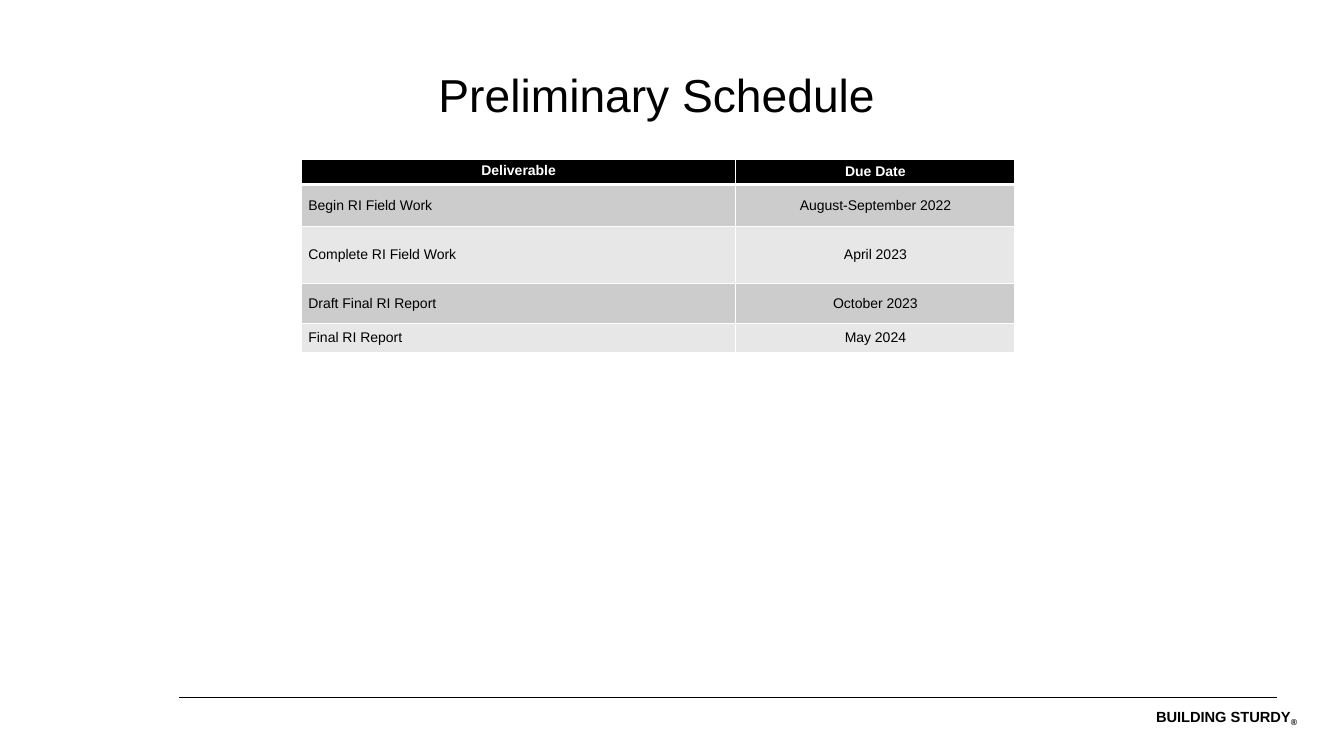
"""Build the preliminary schedule slide."""
from lxml import etree
from pptx import Presentation
from pptx.dml.color import RGBColor
from pptx.enum.shapes import MSO_CONNECTOR
from pptx.enum.text import MSO_ANCHOR, PP_ALIGN
from pptx.oxml.ns import qn
from pptx.util import Pt

BLACK = RGBColor(0, 0, 0)
WHITE = RGBColor(255, 255, 255)
DARK = RGBColor(0xCC, 0xCC, 0xCC)
LIGHT = RGBColor(0xE7, 0xE7, 0xE7)
LEFT, CENTER, RIGHT = PP_ALIGN.LEFT, PP_ALIGN.CENTER, PP_ALIGN.RIGHT
TOP, MIDDLE = MSO_ANCHOR.TOP, MSO_ANCHOR.MIDDLE
STRAIGHT = MSO_CONNECTOR.STRAIGHT


def style(font, size, color=BLACK, bold=False):
    for key, value in {"name": "Arial", "size": Pt(size), "bold": bold}.items():
        setattr(font, key, value)
    font.color.rgb = color


def edge(cell, side, width):
    line = etree.SubElement(cell._tc.get_or_add_tcPr(), qn(f"a:ln{side}"), w=str(Pt(width)))
    fill = etree.SubElement(line, qn("a:solidFill"))
    etree.SubElement(fill, qn("a:srgbClr"), val=str(WHITE))


deck = Presentation()
deck.slide_width, deck.slide_height = Pt(960), Pt(540)
slide = deck.slides.add_slide(deck.slide_layouts[5])
shapes = slide.shapes

rule = shapes.add_connector(STRAIGHT, Pt(912.2), Pt(498.2), Pt(128.2), Pt(498.2))
rule.line.color.rgb = BLACK
rule.line.width = Pt(0.75)
etree.SubElement(rule._element.spPr, qn("a:effectLst"))

motto = shapes.add_textbox(Pt(653), Pt(505.4), Pt(273.6), Pt(13)).text_frame
for key in ("margin_left", "margin_top", "margin_right", "margin_bottom"):
    setattr(motto, key, 0)
motto.word_wrap = True
para = motto.paragraphs[0]
para.alignment = RIGHT
for text, base in (("BUILDING STURDY", 0), ("®", -25000)):
    run = para.add_run()
    run.text = text
    style(run.font, 10.5, bold=True)
    if base:
        run._r.get_or_add_rPr().set("baseline", str(base))

title = shapes.title
box = {"left": 226.1, "top": 41.8, "width": 486, "height": 51.1}
for key, value in box.items():
    setattr(title, key, Pt(value))
frame = title.text_frame
frame.text = "Preliminary Schedule"
frame.vertical_anchor = MIDDLE
frame.paragraphs[0].alignment = CENTER
style(frame.paragraphs[0].runs[0].font, 33)

ROWS = [
    ("Deliverable", "Due Date", 18),
    ("Begin RI Field Work", "August-September 2022", 30.2),
    ("Complete RI Field Work", "April 2023", 40.3),
    ("Draft Final RI Report", "October 2023", 28.8),
    ("Final RI Report", "May 2024", 20.9),
]
PAD = {"margin_left": 5, "margin_right": 5, "margin_top": 2.6, "margin_bottom": 2.6}
table = shapes.add_table(len(ROWS), 2, Pt(215.3), Pt(113.8), Pt(509.7), Pt(138.2)).table
for col, width in zip(table.columns, (310.3, 199.4)):
    col.width = Pt(width)

for i, (*texts, height) in enumerate(ROWS):
    table.rows[i].height = Pt(height)
    head = i == 0
    shade = BLACK if head else DARK if i % 2 else LIGHT
    for j, text in enumerate(texts):
        cell = table.cell(i, j)
        for key, value in PAD.items():
            setattr(cell, key, Pt(value))
        cell.vertical_anchor = TOP if head and j == 0 else MIDDLE
        for side in "LRTB":
            thick = (i, side) in ((0, "B"), (1, "T"))
            edge(cell, side, 3 if thick else 1)
        cell.fill.solid()
        cell.fill.fore_color.rgb = shade
        cell.text = text
        para = cell.text_frame.paragraphs[0]
        para.alignment = CENTER if head or j else LEFT
        style(para.runs[0].font, 10, WHITE if head else BLACK, head)

deck.save("out.pptx")
